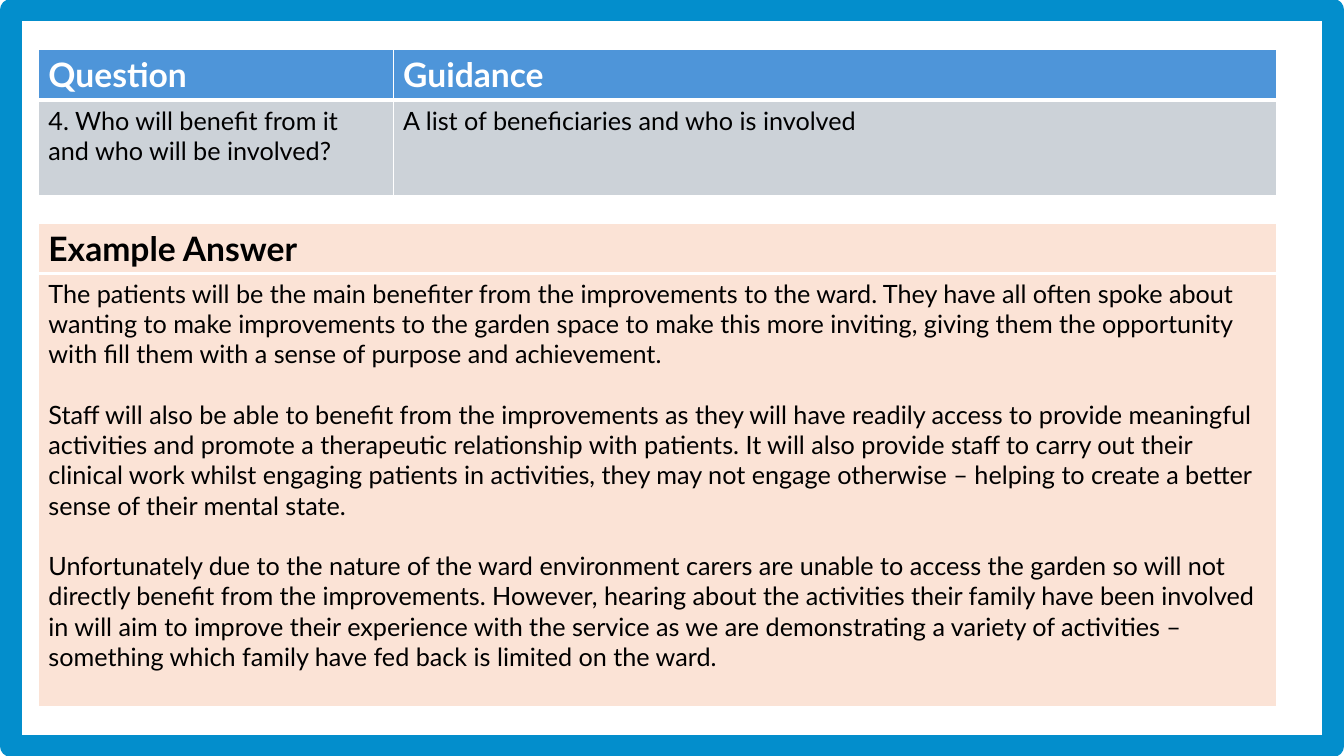
from lxml import etree
from pptx import Presentation
from pptx.dml.color import RGBColor
from pptx.enum.shapes import MSO_SHAPE
from pptx.oxml.ns import qn
from pptx.util import Pt

RECT = MSO_SHAPE.RECTANGLE
FONT = "Lato"
WHITE, BLACK = "FFFFFF", "000000"
BLUE, GREY, PEACH, FRAME = "4E95D9", "CCD2D8", "FBE3D6", "038ECC"
LEFT, WIDTH = 27.4, 884.2
HEAD = 36

GUIDE = [
    ["Question", "Guidance"],
    ["4. Who will benefit from it and who will be involved?",
     "A list of beneficiaries and who is involved"],
]
ANSWER = "\n".join([
    "The patients will be the main benefiter from the improvements to the ward. "
    "They have all often spoke about wanting to make improvements to the garden "
    "space to make this more inviting, giving them the opportunity with fill them "
    "with a sense of purpose and achievement.",
    "Staff will also be able to benefit from the improvements as they will have "
    "readily access to provide meaningful activities and promote a therapeutic "
    "relationship with patients. It will also provide staff to carry out their "
    "clinical work whilst engaging patients in activities, they may not engage "
    "otherwise – helping to create a better sense of their mental state.",
    "Unfortunately due to the nature of the ward environment carers are unable to "
    "access the garden so will not directly benefit from the improvements. However, "
    "hearing about the activities their family have been involved in will aim to "
    "improve their experience with the service as we are demonstrating a variety of "
    "activities – something which family have fed back is limited on the ward.",
])


def color(code):
    return RGBColor.from_string(code)


def border(cell, sides):
    props = cell._tc.get_or_add_tcPr()
    for spot, (side, width) in enumerate(sides.items()):
        line = etree.Element(qn("a:ln" + side), w=str(Pt(width)))
        fill = etree.SubElement(line, qn("a:solidFill"))
        etree.SubElement(fill, qn("a:srgbClr"), val=WHITE)
        props.insert(spot, line)


def write(cell, text, size, ink, bold):
    cell.text_frame.text = text
    for spot, para in enumerate(cell.text_frame.paragraphs):
        if spot:
            para.space_before = Pt(21.6)
        for run in para.runs:
            run.font.name = FONT
            run.font.size = Pt(size)
            run.font.bold = bold
            run.font.color.rgb = color(ink)


def frame(slide, x, y, w, h):
    box = slide.shapes.add_shape(RECT, Pt(x), Pt(y), Pt(w), Pt(h))
    box.shadow.inherit = False
    box.fill.background()
    box.line.color.rgb = color(FRAME)
    box.line.width = Pt(16)


def grid(slide, x, y, w, h, rows, parts, fills, ink):
    table = slide.shapes.add_table(
        len(rows), len(parts), Pt(x), Pt(y), Pt(w), Pt(h)).table
    for col, part in zip(table.columns, parts):
        col.width = Pt(w * part)
    for row, high in zip(table.rows, (HEAD, h - HEAD)):
        row.height = Pt(high)
    looks = [(24, ink, True), (18, BLACK, False)]
    edges = [dict(L=1, R=1, T=1, B=3), dict(L=1, R=1, T=3, B=1)]
    for r, texts in enumerate(rows):
        for c, text in enumerate(texts):
            cell = table.cell(r, c)
            cell.fill.solid()
            cell.fill.fore_color.rgb = color(fills[r])
            border(cell, edges[r])
            write(cell, text, *looks[r])


def main():
    deck = Presentation()
    deck.slide_width, deck.slide_height = Pt(960), Pt(540)
    slide = deck.slides.add_slide(deck.slide_layouts[6])
    frame(slide, 7.8, 7.2, 944.6, 525.6)
    grid(slide, LEFT, 35.5, WIDTH, 104.4, GUIDE,
         (0.2866, 0.7134), (BLUE, GREY), WHITE)
    grid(slide, LEFT, 159.4, WIDTH, 345.6, [["Example Answer"], [ANSWER]],
         (1,), (PEACH, PEACH), BLACK)
    deck.save("out.pptx")


if __name__ == "__main__":
    main()
